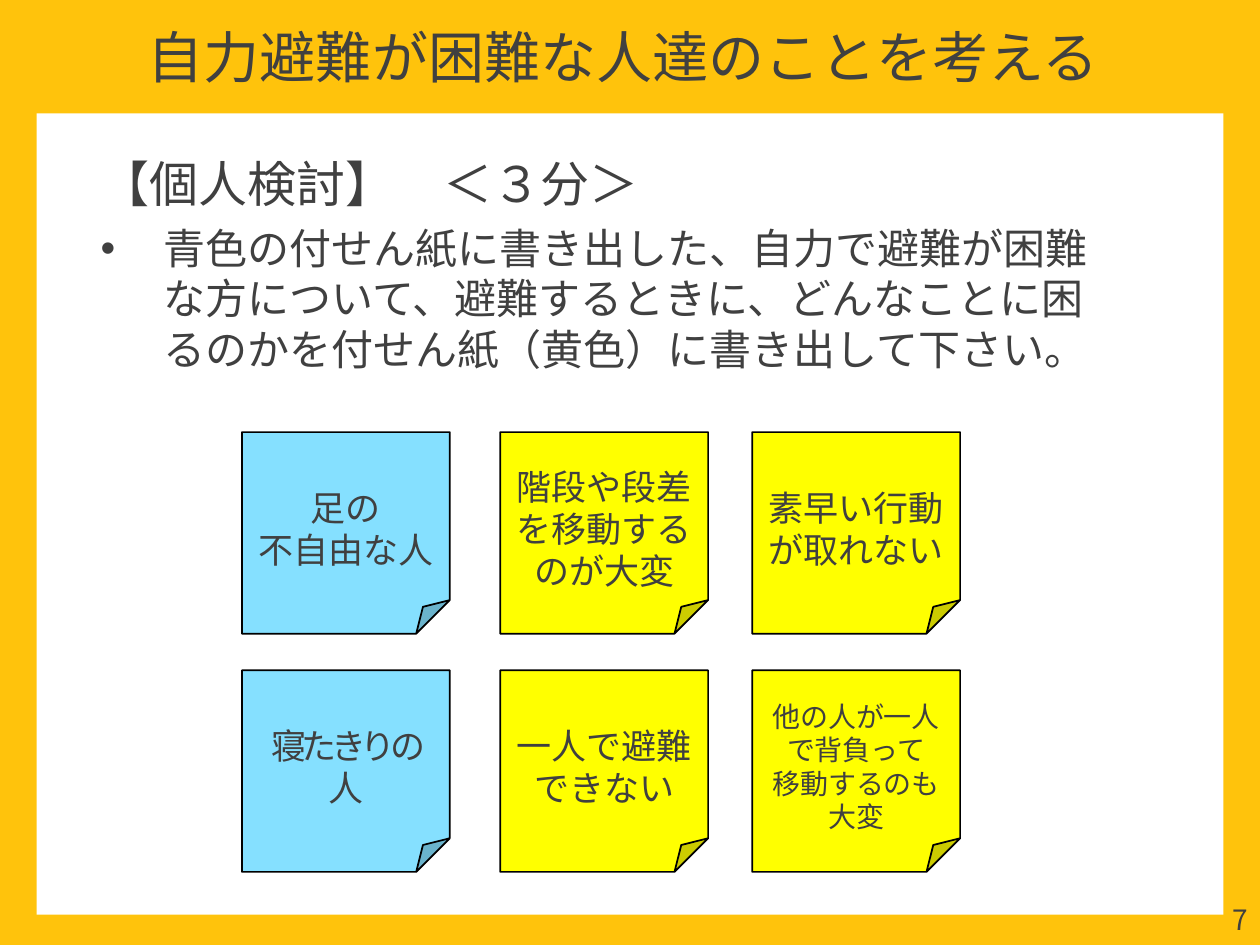
from lxml import etree
from pptx import Presentation
from pptx.dml.color import RGBColor
from pptx.enum.shapes import MSO_SHAPE
from pptx.enum.text import MSO_ANCHOR, PP_ALIGN
from pptx.oxml.ns import qn
from pptx.util import Inches, Pt

RECTANGLE = MSO_SHAPE.RECTANGLE
ROUNDED = MSO_SHAPE.ROUNDED_RECTANGLE
FOLDED = MSO_SHAPE.FOLDED_CORNER
TOP, MIDDLE = MSO_ANCHOR.TOP, MSO_ANCHOR.MIDDLE
LEFT, CENTER = PP_ALIGN.LEFT, PP_ALIGN.CENTER
RIGHT, JUSTIFY = PP_ALIGN.RIGHT, PP_ALIGN.JUSTIFY

FONT = "Noto Sans CJK JP"
COLORS = {
    "frame": "FFC30C",
    "page": "FFFFFF",
    "text": "404040",
    "outline": "000000",
    "person": "85E0FF",
    "trouble": "FFFF00",
}
COLUMNS = [(1.92, "person"), (3.97, "trouble"), (5.97, "trouble")]
ROW_TOPS = [3.43, 5.32]
NOTES = [
    [("足の\n不自由な人", 20, 0), ("階段や段差を移動するのが大変", 20, 0), ("素早い行動が取れない", 20, 0)],
    [("寝たきりの人", 20, -3), ("一人で避難できない", 20, 0), ("他の人が一人で背負って\n移動するのも大変", 16, 0)],
]


class SlideBuilder:
    def __init__(self, slide):
        self.slide = slide

    def color(self, name):
        return RGBColor.from_string(COLORS[name])

    def shape(self, kind, box, fill=None, outline=None):
        shape = self.slide.shapes.add_shape(kind, *map(Inches, box))
        shape.shadow.inherit = False
        if fill:
            shape.fill.solid()
            shape.fill.fore_color.rgb = self.color(fill)
        else:
            shape.fill.background()
        if outline:
            shape.line.color.rgb = self.color(outline)
            shape.line.width = Pt(1)
        else:
            shape.line.fill.background()
        return shape

    def frame(self, shape, anchor, insets=(0.1, 0.05, 0.1, 0.05)):
        frame = shape.text_frame
        frame.word_wrap = True
        frame.vertical_anchor = anchor
        (frame.margin_left, frame.margin_top,
         frame.margin_right, frame.margin_bottom) = map(Inches, insets)
        return frame

    def add_text(self, paragraph, text, size, align, spacing=0):
        paragraph.alignment = align
        for index, line in enumerate(text.split("\n")):
            if index:
                paragraph.add_line_break()
            run = paragraph.add_run()
            run.text = line
            run.font.size = Pt(size)
            run.font.name = FONT
            run.font.color.rgb = self.color("text")
            properties = run._r.get_or_add_rPr()
            etree.SubElement(properties, qn("a:ea")).set("typeface", FONT)
            if spacing:
                properties.set("spc", str(spacing * 100))

    def label(self, box, text, size, align, anchor):
        textbox = self.slide.shapes.add_textbox(*map(Inches, box))
        paragraph = self.frame(textbox, anchor).paragraphs[0]
        self.add_text(paragraph, text, size, align)
        return paragraph

    def instructions(self, box, heading, task):
        body = self.shape(ROUNDED, box)
        body.adjustments[0] = 0
        frame = self.frame(body, MIDDLE, (0.1, 0.04, 0.1, 0.08))
        heading_line = frame.paragraphs[0]
        heading_line.space_after = Pt(6)
        self.add_text(heading_line, heading, 28, JUSTIFY)
        task_line = frame.add_paragraph()
        properties = task_line._p.get_or_add_pPr()
        properties.set("marL", str(Inches(0.5)))
        properties.set("indent", str(Inches(-0.5)))
        etree.SubElement(properties, qn("a:buFont")).set("typeface", "Arial")
        etree.SubElement(properties, qn("a:buChar")).set("char", "•")
        self.add_text(task_line, task, 24, LEFT)

    def sticky_note(self, left, top, fill, text, size, spacing):
        note = self.shape(FOLDED, (left, top, 1.65, 1.6), fill, "outline")
        frame = self.frame(note, MIDDLE, (0.1, 0.24, 0.1, 0.05))
        self.add_text(frame.paragraphs[0], text, size, CENTER, spacing)


def main():
    presentation = Presentation()
    presentation.slide_width = Inches(10)
    presentation.slide_height = Inches(7.5)
    builder = SlideBuilder(presentation.slides.add_slide(presentation.slide_layouts[6]))

    builder.shape(RECTANGLE, (0, 0, 10, 7.5), "frame")
    builder.shape(RECTANGLE, (0.29, 0.9, 9.42, 6.36), "page")
    builder.label((7.75, 7.1, 2.25, 0.4), "7", 16, RIGHT, MIDDLE)
    title = builder.label((0.15, 0.19, 9.6, 0.71),
                          "自力避難が困難な人達のことを考える", 32, CENTER, TOP)
    title.line_spacing = 0.9
    builder.instructions(
        (0.7, 0.9, 8.12, 2.42),
        "【個人検討】　＜３分＞",
        "青色の付せん紙に書き出した、自力で避難が困難な方について、避難するときに、"
        "どんなことに困るのかを付せん紙（黄色）に書き出して下さい。",
    )
    for top, row in zip(ROW_TOPS, NOTES):
        for (left, fill), (text, size, spacing) in zip(COLUMNS, row):
            builder.sticky_note(left, top, fill, text, size, spacing)

    presentation.save("out.pptx")


if __name__ == "__main__":
    main()
